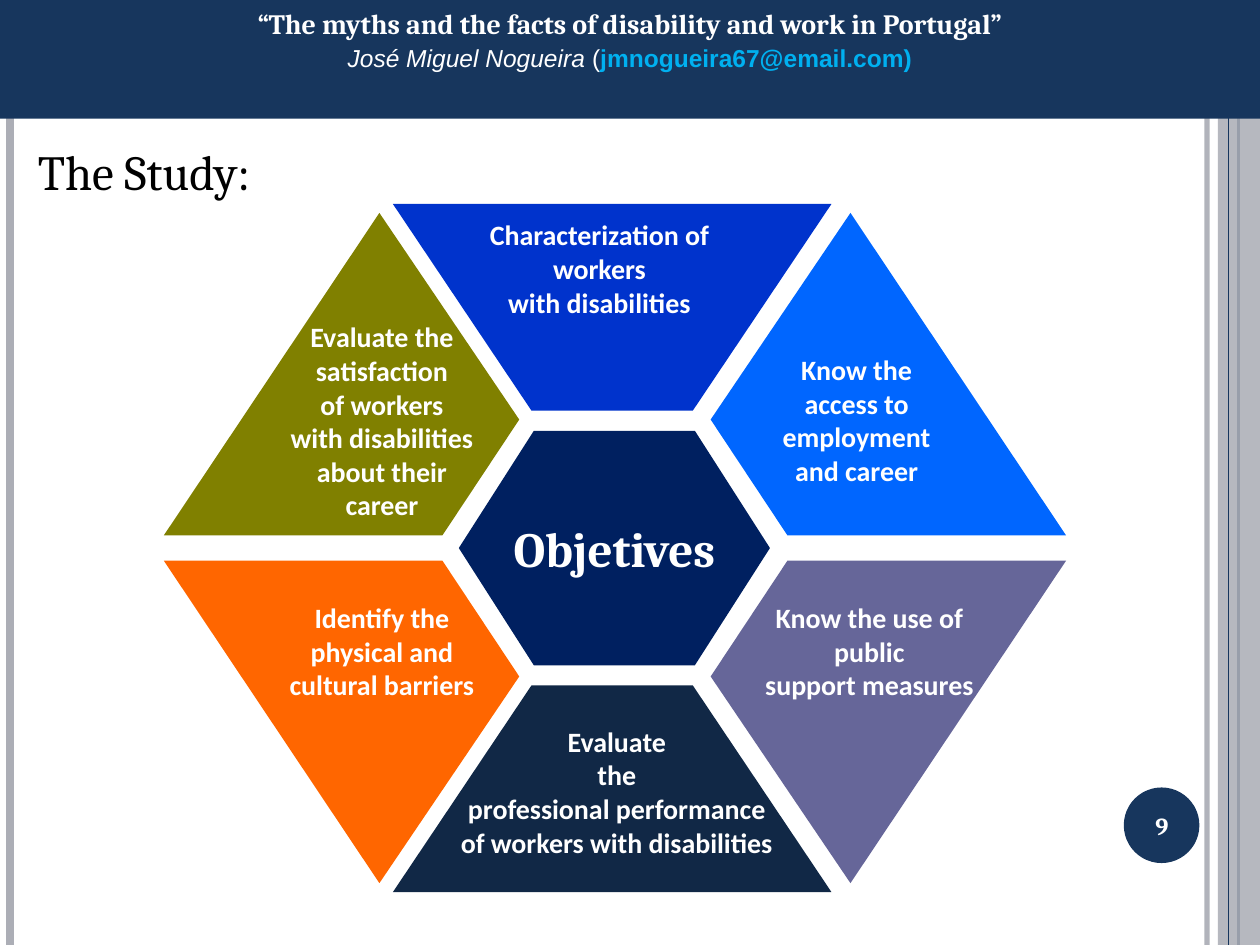
from dataclasses import dataclass

from lxml import etree
from pptx import Presentation
from pptx import util as u
from pptx.dml.color import RGBColor
from pptx.enum import shapes, text
from pptx.oxml.ns import qn

Pt = u.Pt
WHITE = RGBColor(0xFF, 0xFF, 0xFF)
BLACK = RGBColor(0x00, 0x00, 0x00)
GREY = RGBColor(0xAC, 0xAE, 0xB6)
NAVY = RGBColor(0x17, 0x36, 0x5D)
CYAN = RGBColor(0x00, 0xB0, 0xF0)
CORE = RGBColor(0x00, 0x20, 0x60)
ROYAL = RGBColor(0x00, 0x33, 0xCC)
AZURE = RGBColor(0x00, 0x66, 0xFF)
MAUVE = RGBColor(0x66, 0x66, 0x99)
INK = RGBColor(0x11, 0x28, 0x46)
ORANGE = RGBColor(0xFF, 0x66, 0x00)
OLIVE = RGBColor(0x80, 0x80, 0x00)

WIDE, HIGH = 720, 540
MID_Y = 313.2
PAD = 3.6
LINE = 19.5
# Corner offsets from the wheel's centre, growing right and down
SIDE = ((134.6, 191.5), (257.8, 7.2), (98.6, 7.2), (54.7, 73.4))
CAP = ((-125.3, 196.6), (-46.1, 78.5), (46.1, 78.5), (125.3, 196.6))


@dataclass(frozen=True)
class Stripe:
    x: float
    color: RGBColor
    width: float
    alpha: int = 100


@dataclass(frozen=True)
class Label:
    """Centred lines; mid is the middle of the box across."""
    mid: float
    top: float
    width: float
    words: str


@dataclass(frozen=True)
class Wedge:
    """A wheel part; flip_x and flip_y are 1 or -1."""
    color: RGBColor
    form: tuple
    mid_x: float
    flip_x: int
    flip_y: int
    label: Label


BACK = (Stripe(689.8, GREY, 3, 93), Stripe(5.8, GREY, 4.5),
        Stripe(707.8, NAVY, 1.5))
FRONT = Stripe(702, NAVY, 0.75)

WEDGES = (
    Wedge(AZURE, SIDE, 351.4, 1, -1, Label(
        489.5, 198, 110, "Know the\naccess to\nemployment\nand career")),
    Wedge(MAUVE, SIDE, 351.4, 1, 1, Label(
        496.8, 339.7, 140, "Know the use of\npublic\nsupport measures")),
    Wedge(ORANGE, SIDE, 351.4, -1, 1, Label(
        218.3, 339.7, 130, "Identify the\nphysical and\ncultural barriers")),
    Wedge(ROYAL, CAP, 349.8, 1, -1, Label(
        342.6, 121, 260, "Characterization of\nworkers\nwith disabilities")),
    Wedge(INK, CAP, 349.8, 1, 1, Label(
        352.5, 410.4, 210,
        "Evaluate\nthe\nprofessional performance\nof workers with disabilities")),
    Wedge(OLIVE, SIDE, 351.4, -1, -1, Label(
        218.3, 179.3, 130,
        "Evaluate the\nsatisfaction\nof workers\nwith disabilities\n"
        "about their\ncareer")),
)


def place(box: tuple) -> list:
    return [Pt(v) for v in box]


def fade(props, alpha: int) -> None:
    """Set the opacity of a solid colour, in percent."""
    if alpha < 100:
        tone = props.find(".//" + qn("a:srgbClr"))
        etree.SubElement(tone, qn("a:alpha"), val=str(alpha * 1000))


def paint(shape, color: RGBColor, alpha: int = 100) -> None:
    shape.shadow.inherit = False
    shape.fill.solid()
    shape.fill.fore_color.rgb = color
    shape.line.fill.background()
    fade(shape.element.spPr, alpha)


def write(para, words: str, *, size: float = 16, font: str = "Cambria",
          color: RGBColor = WHITE, bold: bool = True, slant: bool = False) -> None:
    run = para.add_run()
    run.text = words
    face = run.font
    face.size, face.name, face.bold, face.italic = Pt(size), font, bold, slant
    face.color.rgb = color


def set_up(frame, *, pad: float = None, wrap: bool = True,
           anchor=text.MSO_ANCHOR.TOP) -> None:
    frame.word_wrap = wrap
    frame.vertical_anchor = anchor
    if pad is not None:
        frame.margin_left = frame.margin_right = Pt(pad)
        frame.margin_top = frame.margin_bottom = Pt(pad)


def fill_up(frame, words: str, align=text.PP_ALIGN.CENTER, **style) -> None:
    """Write one paragraph for each line of words."""
    for i, line in enumerate(words.split("\n")):
        para = frame.add_paragraph() if i else frame.paragraphs[0]
        para.alignment = align
        write(para, line, **style)


def add_shape(slide, kind, box: tuple, color: RGBColor, alpha: int = 100):
    shape = slide.shapes.add_shape(kind, *place(box))
    paint(shape, color, alpha)
    return shape


def add_stripe(slide, stripe: Stripe) -> None:
    line = slide.shapes.add_connector(shapes.MSO_CONNECTOR.STRAIGHT,
                                      *place((stripe.x, 0, stripe.x, HIGH)))
    line.line.color.rgb = stripe.color
    line.line.width = Pt(stripe.width)
    props = line.element.spPr
    fade(props, stripe.alpha)
    etree.SubElement(props, qn("a:effectLst"))


def add_wedge(slide, wedge: Wedge) -> None:
    spots = [(Pt(wedge.mid_x + wedge.flip_x * x), Pt(MID_Y + wedge.flip_y * y))
             for x, y in wedge.form]
    pen = slide.shapes.build_freeform(*spots[0])
    pen.add_line_segments(spots[1:], close=True)
    paint(pen.convert_to_shape(), wedge.color)


def add_label(slide, label: Label) -> None:
    rows = label.words.count("\n") + 1
    box = (label.mid - label.width / 2, label.top,
           label.width, rows * LINE + 2 * PAD)
    frame = slide.shapes.add_textbox(*place(box)).text_frame
    set_up(frame, pad=PAD)
    fill_up(frame, label.words, font="Calibri")


def add_frame(slide) -> None:
    """Draw the side stripes, the page number and the header."""
    kinds = shapes.MSO_SHAPE
    for stripe in BACK:
        add_stripe(slide, stripe)
    add_shape(slide, kinds.RECTANGLE, (696, 0, 24, HIGH), GREY, 87)
    add_stripe(slide, FRONT)

    add_shape(slide, kinds.OVAL, (642.2, 450, 43.2, 43.2), NAVY)
    page = slide.shapes.add_textbox(*place((640, 451.4, 48, 41))).text_frame
    set_up(page, anchor=text.MSO_ANCHOR.MIDDLE)
    fill_up(page, "9", size=14)

    head = add_shape(slide, kinds.RECTANGLE, (0, 0, WIDE, 67.8), NAVY).text_frame
    set_up(head)
    fill_up(head, "“The myths and the facts of disability and work in Portugal”")
    para = head.add_paragraph()
    para.alignment = text.PP_ALIGN.CENTER
    para.space_before = Pt(2)
    style = dict(size=14, font="Arial")
    write(para, "José Miguel Nogueira ", bold=False, slant=True, **style)
    write(para, "(", bold=False, **style)
    write(para, "jmnogueira67@email.com)", color=CYAN, **style)


def add_wheel(slide) -> None:
    for wedge in WEDGES:
        add_wedge(slide, wedge)
    hub = add_shape(slide, shapes.MSO_SHAPE.HEXAGON,
                    (262.2, 246.2, 177.8, 134), CORE)
    hub.adjustments[0] = 0.32
    set_up(hub.text_frame, pad=3, wrap=False, anchor=text.MSO_ANCHOR.MIDDLE)
    fill_up(hub.text_frame, "Objetives", size=28)
    for wedge in WEDGES:
        add_label(slide, wedge.label)


def main() -> None:
    deck = Presentation()
    deck.slide_width, deck.slide_height = Pt(WIDE), Pt(HIGH)
    slide = deck.slides.add_slide(deck.slide_layouts[5])
    title = slide.shapes.title
    title.left, title.top, title.width, title.height = place((14.4, 77, 157.7, 114))
    set_up(title.text_frame, wrap=False)
    fill_up(title.text_frame, "The Study:", text.PP_ALIGN.LEFT,
            size=28, color=BLACK, bold=False)
    add_frame(slide)
    add_wheel(slide)
    deck.save("out.pptx")


if __name__ == "__main__":
    main()
